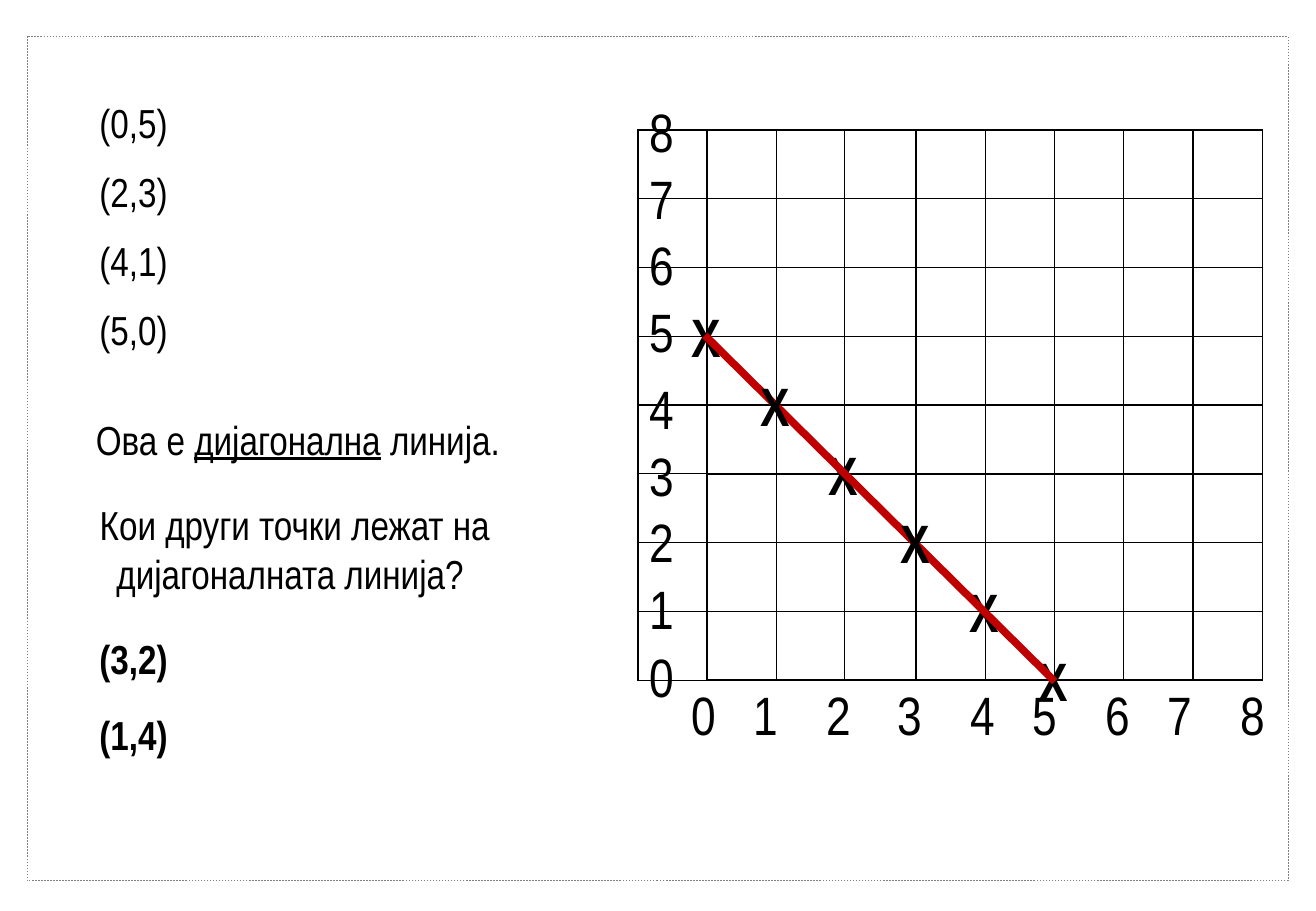
"""Builds a slide about points on a diagonal line in a coordinate grid."""
from lxml import etree
from pptx import Presentation
from pptx.dml.color import RGBColor
from pptx.enum.dml import MSO_LINE
from pptx.enum.shapes import MSO_CONNECTOR, MSO_SHAPE
from pptx.enum.text import PP_ALIGN
from pptx.oxml import parse_xml
from pptx.oxml.ns import qn
from pptx.util import Inches, Pt

RECT = MSO_SHAPE.RECTANGLE
LINE = MSO_CONNECTOR.STRAIGHT
DASH = MSO_LINE.DASH
LEFT, CENTER = PP_ALIGN.LEFT, PP_ALIGN.CENTER
NS = "http://schemas.openxmlformats.org/drawingml/2006/main"


def color(code):
    return RGBColor.from_string(code)


def write(x, y, w, h, lines, size=24, bold=False, align=LEFT, wrap=True):
    frame = slide.shapes.add_textbox(Inches(x), Inches(y), Inches(w), Inches(h)).text_frame
    frame.word_wrap = wrap
    for i, runs in enumerate(lines):
        para = frame.add_paragraph() if i else frame.paragraphs[0]
        for text, under in runs:
            run = para.add_run()
            run.text = text
            if under:
                run.font.underline = True
        para.alignment = align
        if i:
            para.space_before = Pt(12)
        para.font.name = "Arial Narrow"
        para.font.size = Pt(size)
        para.font.bold = bold
        para.font.color.rgb = color("000000")


deck = Presentation()
deck.slide_width, deck.slide_height = Inches(10.83), Inches(7.5)
slide = deck.slides.add_slide(deck.slide_layouts[6])

frame = slide.shapes.add_shape(RECT, Inches(0.22), Inches(0.3), Inches(10.38), Inches(6.95))
frame.shadow.inherit = False
frame.fill.background()
frame.line.color.rgb = color("808080")
frame.line.width = Pt(0.25)
frame.line.dash_style = DASH

left, top, high = 5.25, 1.07, 4.53
widths = [0.57, 0.57, 0.56, 0.59] + [0.57] * 5
step = high / 8
grid = slide.shapes.add_table(8, 9, Inches(left), Inches(top), Inches(sum(widths)), Inches(high)).table
grid.first_row = grid.horz_banding = False
for col, width in zip(grid.columns, widths):
    col.width = Inches(width)
for row in grid.rows:
    row.height = Inches(step)
    for i, cell in enumerate(row.cells):
        props = cell._tc.get_or_add_tcPr()
        for side in "LRTB":
            thin = (i == 0 and side != "R") or (i == 8 and side == "R")
            wide = Pt(0.75 if thin else 1)
            props.append(parse_xml(
                f'<a:ln{side} xmlns:a="{NS}" w="{wide}"><a:solidFill>'
                f'<a:srgbClr val="000000"/></a:solidFill></a:ln{side}>'))
        cell.fill.background()

across = [5.59, 6.1, 6.7, 7.29, 7.89, 8.4, 9, 9.51, 10.11]
up = [5.25, 4.69, 4.14, 3.59, 3.04, 2.41, 1.86, 1.31, 0.76]
for n, (x, y) in enumerate(zip(across, up)):
    for at in ((x, 5.56), (left, y)):
        write(*at, 0.6, 0.63, [[(str(n), False)]], 32)

points = ["(0,5)", "(2,3)", "(4,1)", "(5,0)"]
write(0.72, 0.76, 1.19, 2.32, [[(point, False)] for point in points])

for marks in ((0, 2, 4, 5), (3, 1)):
    if marks[0] == 3:
        line = slide.shapes.add_connector(LINE, Inches(5.8), Inches(2.76), Inches(8.68), Inches(5.61))
        line.line.color.rgb = color("C00000")
        line.line.width = Pt(4.5)
        etree.SubElement(line._element.spPr, qn("a:effectLst"))
    for n in marks:
        x = left + sum(widths[:n + 1]) - 0.23
        write(x, 2.45 + n * step, 0.77, 0.63, [[("X", False)]], 32, True)

write(0.72, 5.17, 0.77, 0.5, [[("(3,2)", False)]], bold=True, wrap=False)
write(0.72, 5.8, 1.45, 0.5, [[("(1,4)", False)]], bold=True)
write(0.69, 3.37, 3.58, 0.5,
      [[("Ова е ", False), ("дијагонална", True), (" линија.", False)]], wrap=False)
write(0, 4.07, 4.85, 0.91,
      [[("Кои други точки лежат на дијагоналната линија? ", False)]], align=CENTER)

deck.save("out.pptx")
